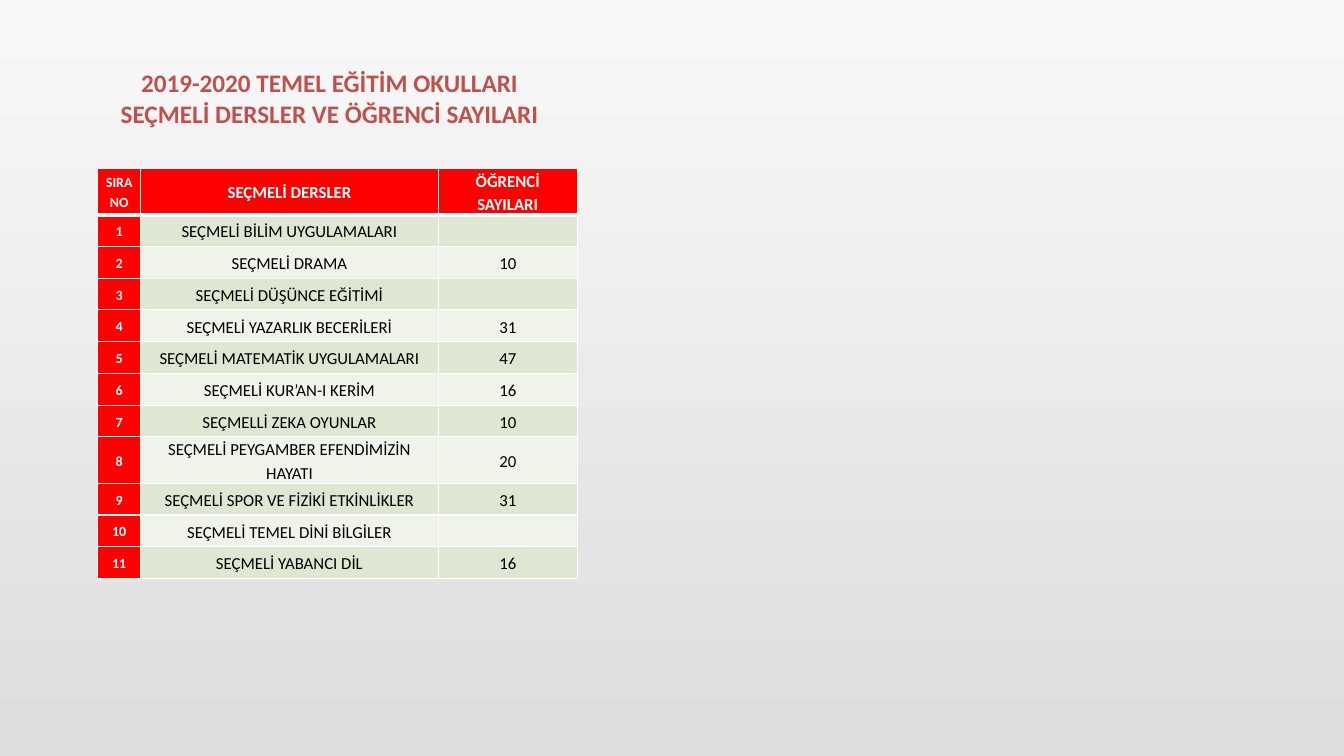
from lxml import etree
from pptx import Presentation
from pptx.dml.color import RGBColor
from pptx.enum.text import MSO_ANCHOR, MSO_AUTO_SIZE, PP_ALIGN
from pptx.oxml.ns import qn
from pptx.util import Cm, Pt

MID = MSO_ANCHOR.MIDDLE
GROW = MSO_AUTO_SIZE.SHAPE_TO_FIT_TEXT
CENTER = PP_ALIGN.CENTER

RED = RGBColor(0xFF, 0x00, 0x00)
BRICK = RGBColor(0xC0, 0x50, 0x4D)
WHITE = RGBColor(0xFF, 0xFF, 0xFF)
BLACK = RGBColor(0x00, 0x00, 0x00)
SAGE = RGBColor(0xDE, 0xE7, 0xD1)
PALE = RGBColor(0xEF, 0xF3, 0xEA)
LIGHT = RGBColor(0xF8, 0xF8, 0xF8)
GRAY = RGBColor(0xDD, 0xDD, 0xDD)

TITLE = ["2019-2020 TEMEL EĞİTİM OKULLARI", "SEÇMELİ DERSLER VE ÖĞRENCİ SAYILARI"]
HEAD = ("SIRA NO", "SEÇMELİ DERSLER", "ÖĞRENCİ SAYILARI")
COURSES = [
    ("SEÇMELİ BİLİM UYGULAMALARI", ""),
    ("SEÇMELİ DRAMA", "10"),
    ("SEÇMELİ DÜŞÜNCE EĞİTİMİ", ""),
    ("SEÇMELİ YAZARLIK BECERİLERİ", "31"),
    ("SEÇMELİ MATEMATİK UYGULAMALARI", "47"),
    ("SEÇMELİ KUR’AN-I KERİM", "16"),
    ("SEÇMELLİ ZEKA OYUNLAR", "10"),
    ("SEÇMELİ PEYGAMBER EFENDİMİZİN HAYATI", "20"),
    ("SEÇMELİ SPOR VE FİZİKİ ETKİNLİKLER", "31"),
    ("SEÇMELİ TEMEL DİNİ BİLGİLER", ""),
    ("SEÇMELİ YABANCI DİL", "16"),
]
SHARES = (0.09, 0.62, 0.29)
FRAME = {"word_wrap": False, "auto_size": GROW, "vertical_anchor": MID}
PLAIN = {"first_row": False, "horz_banding": False}
INSET = {"vertical_anchor": MID, "margin_left": Cm(0.18), "margin_right": Cm(0.18),
         "margin_top": 0, "margin_bottom": 0}
LINE = {"alignment": CENTER, "line_spacing": 1.15, "space_after": Pt(10)}


def style(item, values):
    """Set each attribute of item from a dict of values."""
    for name, value in values.items():
        setattr(item, name, value)


def ink(para, size, color, bold):
    """Format the font of every run in a paragraph."""
    for run in para.runs:
        style(run.font, {"name": "Calibri", "size": Pt(size), "bold": bold})
        run.font.color.rgb = color


def edge(cell, row):
    """Draw white borders, thicker below the header row."""
    props = cell._tc.get_or_add_tcPr()
    for side in "LRTB":
        thick = (row, side) in ((0, "B"), (1, "T"))
        line = etree.SubElement(props, qn(f"a:ln{side}"), w=str(Pt(3 if thick else 1)))
        fill = etree.SubElement(line, qn("a:solidFill"))
        etree.SubElement(fill, qn("a:srgbClr"), val=str(WHITE))


def backdrop(slide):
    """Fill the slide with a gradient from top to bottom."""
    fill = slide.background.fill
    fill.gradient()
    fill.gradient_angle = 270
    for stop, color in zip(fill.gradient_stops, (LIGHT, GRAY)):
        stop.color.rgb = color


def heading(slide, left, top, width, height):
    """Place the two-line title in the given box."""
    title = slide.shapes.title
    style(title, {"left": left, "top": top, "width": width, "height": height})
    frame = title.text_frame
    frame.text = "\n".join(TITLE)
    style(frame, FRAME)
    for para in frame.paragraphs:
        para.alignment = CENTER
        ink(para, 18, BRICK, True)


def entry(cell, text, row, col):
    """Write and format one table cell."""
    key = row == 0 or col == 0
    style(cell, INSET)
    edge(cell, row)
    cell.fill.solid()
    cell.fill.fore_color.rgb = RED if key else SAGE if row % 2 else PALE
    if text:
        cell.text = text
        para = cell.text_frame.paragraphs[0]
        style(para, LINE)
        ink(para, 12 if col else 10, WHITE if key else BLACK, key)


def roster(slide, left, top, width, height):
    """Place the course table in the given box."""
    rows = [HEAD] + [(str(n), *course) for n, course in enumerate(COURSES, 1)]
    table = slide.shapes.add_table(len(rows), len(HEAD), left, top, width, height).table
    style(table, PLAIN)
    for col, share in zip(table.columns, SHARES):
        col.width = int(width * share)
    for r, texts in enumerate(rows):
        table.rows[r].height = Cm(0.8 if r else 0.89)
        for c, text in enumerate(texts):
            entry(table.cell(r, c), text, r, c)


def main():
    """Build the slide and save it."""
    deck = Presentation()
    style(deck, {"slide_width": Cm(33.87), "slide_height": Cm(19.05)})
    slide = deck.slides.add_slide(deck.slide_layouts[5])
    backdrop(slide)
    heading(slide, Cm(2.74), Cm(1.57), Cm(11.13), Cm(1.8))
    roster(slide, Cm(2.46), Cm(4.24), Cm(12.09), Cm(9.69))
    deck.save("out.pptx")


if __name__ == "__main__":
    main()
